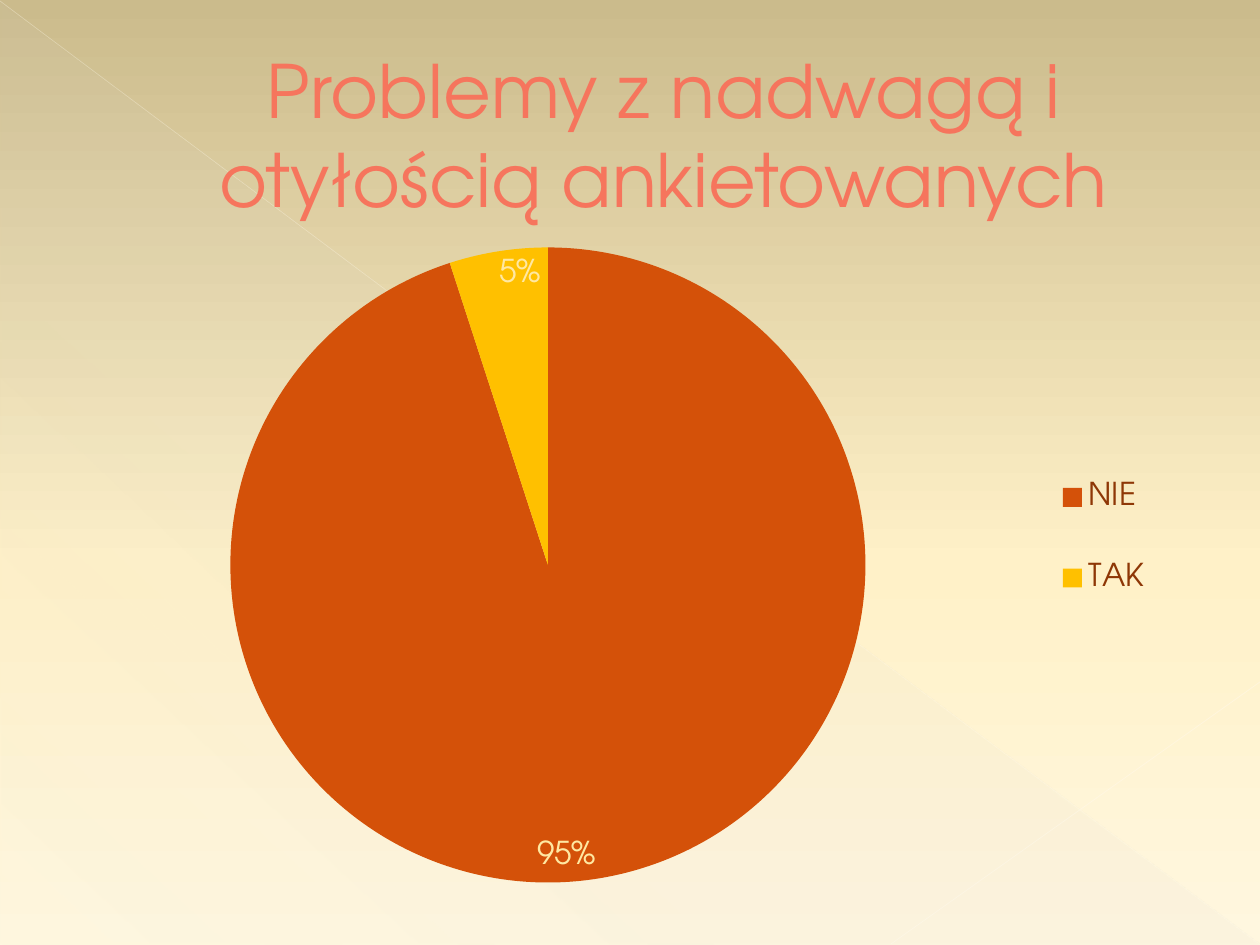
import pptx
import pptx.chart.data
import pptx.dml.color
import pptx.enum.chart
import pptx.enum.shapes
import pptx.enum.text
import pptx.oxml
import pptx.oxml.ns
import pptx.util
from lxml import etree

RGB = pptx.dml.color.RGBColor
Pt = pptx.util.Pt
qn = pptx.oxml.ns.qn
PX = 914400 // 126
FONT = "TeX Gyre Adventor"

SAND = RGB(0xCB, 0xBB, 0x8C)
CREAM = RGB(0xFF, 0xF1, 0xC8)
IVORY = RGB(0xFF, 0xF7, 0xDF)
GREY = RGB(0xD2, 0xD2, 0xD2)
PALE_LINE = RGB(0xFF, 0xFA, 0xEB)
PALE_EDGE = RGB(0xFF, 0xFA, 0xED)
CORAL = RGB(0xF6, 0x75, 0x5D)
BROWN = RGB(0x93, 0x38, 0x06)
LEGEND_BROWN = RGB(0x8E, 0x37, 0x06)
LABEL_YELLOW = RGB(0xFF, 0xE8, 0xA2)
ORANGE = RGB(0xD4, 0x51, 0x09)
AMBER = RGB(0xFF, 0xC0, 0x00)


def px(*values):
    return [v * PX for v in values]


def add_color(parent, color, alpha=100):
    clr = etree.SubElement(parent, qn("a:srgbClr"), val=str(color))
    if alpha < 100:
        etree.SubElement(clr, qn("a:alpha"), val=str(alpha * 1000))


def set_gradient(fill, element, stops, angle):
    """Stops are (position %, colour, opacity %); the angle is clockwise."""
    fill.gradient()
    fill.gradient_angle = 360 - angle
    gs_list = element.find(".//" + qn("a:gsLst"))
    for gs in list(gs_list):
        gs_list.remove(gs)
    for pos, color, alpha in stops:
        gs = etree.SubElement(gs_list, qn("a:gs"), pos=str(pos * 1000))
        add_color(gs, color, alpha)


def add_triangle(s, box):
    sp = s.shapes.add_shape(pptx.enum.shapes.MSO_SHAPE.RIGHT_TRIANGLE, *px(*box))
    sp.shadow.inherit = False
    sp.line.fill.background()
    set_gradient(sp.fill, sp._element,
                 [(0, GREY, 10), (70, GREY, 8), (100, GREY, 1)], 133)


def add_line(s, ends, color, width, alpha):
    line = s.shapes.add_connector(pptx.enum.shapes.MSO_CONNECTOR.STRAIGHT, *px(*ends))
    line.line.width = Pt(width)
    line.line.color.rgb = color
    clr = line._element.spPr.find(".//" + qn("a:srgbClr"))
    etree.SubElement(clr, qn("a:alpha"), val=str(alpha * 1000))
    etree.SubElement(line._element.spPr, qn("a:effectLst"))


def set_title(s, text, box):
    title = s.shapes.title
    title.left, title.top, title.width, title.height = px(*box)
    s.shapes._spTree.append(title._element)  # in front of the decoration
    tf = title.text_frame
    tf.text = text
    tf.word_wrap = True
    tf.auto_size = pptx.enum.text.MSO_AUTO_SIZE.NONE
    tf.vertical_anchor = pptx.enum.text.MSO_ANCHOR.MIDDLE
    p = tf.paragraphs[0]
    p.alignment = pptx.enum.text.PP_ALIGN.CENTER
    pPr = p._p.get_or_add_pPr()
    pPr.set("marL", str(67 * PX))
    pPr.set("indent", "0")
    r = p.runs[0]
    set_font(r.font, 42, CORAL)
    outline = etree.Element(qn("a:ln"), w=str(Pt(0.5)))
    add_color(etree.SubElement(outline, qn("a:solidFill")), BROWN)
    r.font._element.insert(0, outline)


def set_font(font, size, color):
    font.name = FONT
    font.size = Pt(size)
    font.color.rgb = color


def set_layout(element, after, box, inner=False):
    """Place a chart part by fractions of the chart's size."""
    for old in element.findall(qn("c:layout")):
        element.remove(old)
    layout = etree.Element(qn("c:layout"))
    manual = etree.SubElement(layout, qn("c:manualLayout"))
    if inner:
        etree.SubElement(manual, qn("c:layoutTarget"), val="inner")
    for mode in ("xMode", "yMode"):
        etree.SubElement(manual, qn("c:" + mode), val="edge")
    for key, value in zip("xywh", box):
        etree.SubElement(manual, qn("c:" + key), val=str(value))
    if after is None:
        element.insert(0, layout)
    else:
        after.addnext(layout)


def add_pie(s, box, values, colors):
    data = pptx.chart.data.CategoryChartData()
    data.categories = list(values)
    data.add_series("Series 1", list(values.values()))
    chart = s.shapes.add_chart(pptx.enum.chart.XL_CHART_TYPE.PIE, *px(*box), data).chart
    set_font(chart.font, 18, LABEL_YELLOW)
    chart.has_title = False

    # Slices and percentages
    plot = chart.plots[0]
    plot.vary_by_categories = True
    for i, color in enumerate(colors):
        fill = plot.series[0].points[i].format.fill
        fill.solid()
        fill.fore_color.rgb = color
    plot.has_data_labels = True
    labels = plot.data_labels
    labels.show_percentage = True
    labels.show_value = False
    labels.number_format = "0%"
    labels.number_format_is_linked = False
    labels.position = pptx.enum.chart.XL_LABEL_POSITION.INSIDE_END
    set_font(labels.font, 18, LABEL_YELLOW)
    plot_area = chart._chartSpace.find(".//" + qn("c:plotArea"))
    set_layout(plot_area, None, (0.01, 0.03, 0.86, 0.93), inner=True)

    # Legend
    chart.has_legend = True
    legend = chart.legend
    legend.position = pptx.enum.chart.XL_LEGEND_POSITION.RIGHT
    legend.include_in_layout = False
    set_font(legend.font, 18, LEGEND_BROWN)
    set_layout(legend._element, legend._element.find(qn("c:legendPos")),
               (0.88, 0.3, 0.1, 0.31))


def main():
    prs = pptx.Presentation()
    prs.slide_width, prs.slide_height = px(1260, 945)
    s = prs.slides.add_slide(prs.slide_layouts[5])

    # Background and decoration
    set_gradient(s.background.fill, s._element,
                 [(0, SAND, 100), (60, CREAM, 100), (100, IVORY, 100)], 90)
    add_triangle(s, (1, 3, 1258, 942))
    add_line(s, (0, 1, 1259, 944), PALE_LINE, 0.39, 35)
    add_line(s, (1260, 682, 891, 944), PALE_EDGE, 0.47, 45)

    # Content
    set_title(s, "Problemy z nadwagą i otyłością ankietowanych", (63, 37, 1134, 193))
    add_pie(s, (49, 227, 1134, 683), {"NIE": 95, "TAK": 5}, (ORANGE, AMBER))
    prs.save("out.pptx")


if __name__ == "__main__":
    main()
